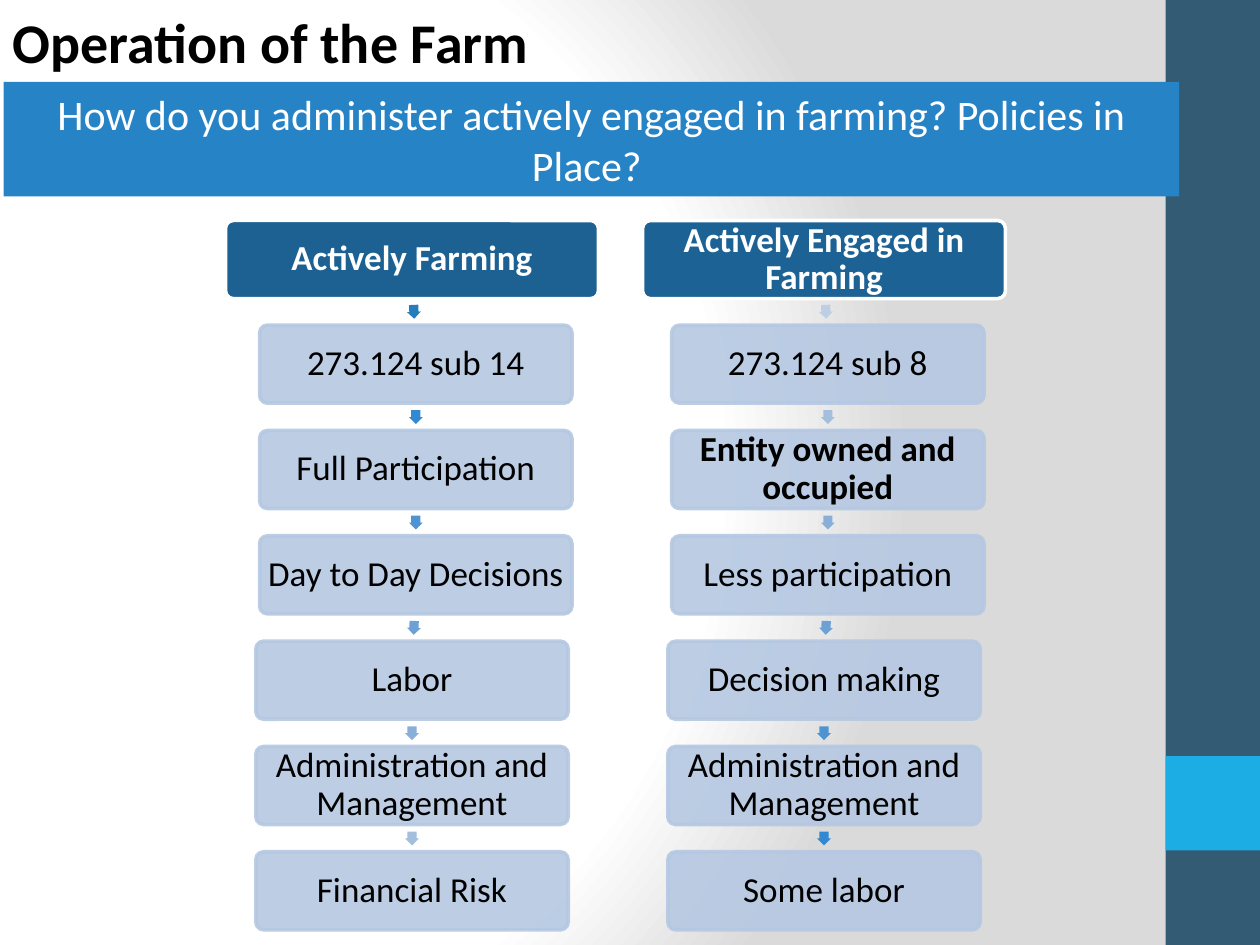
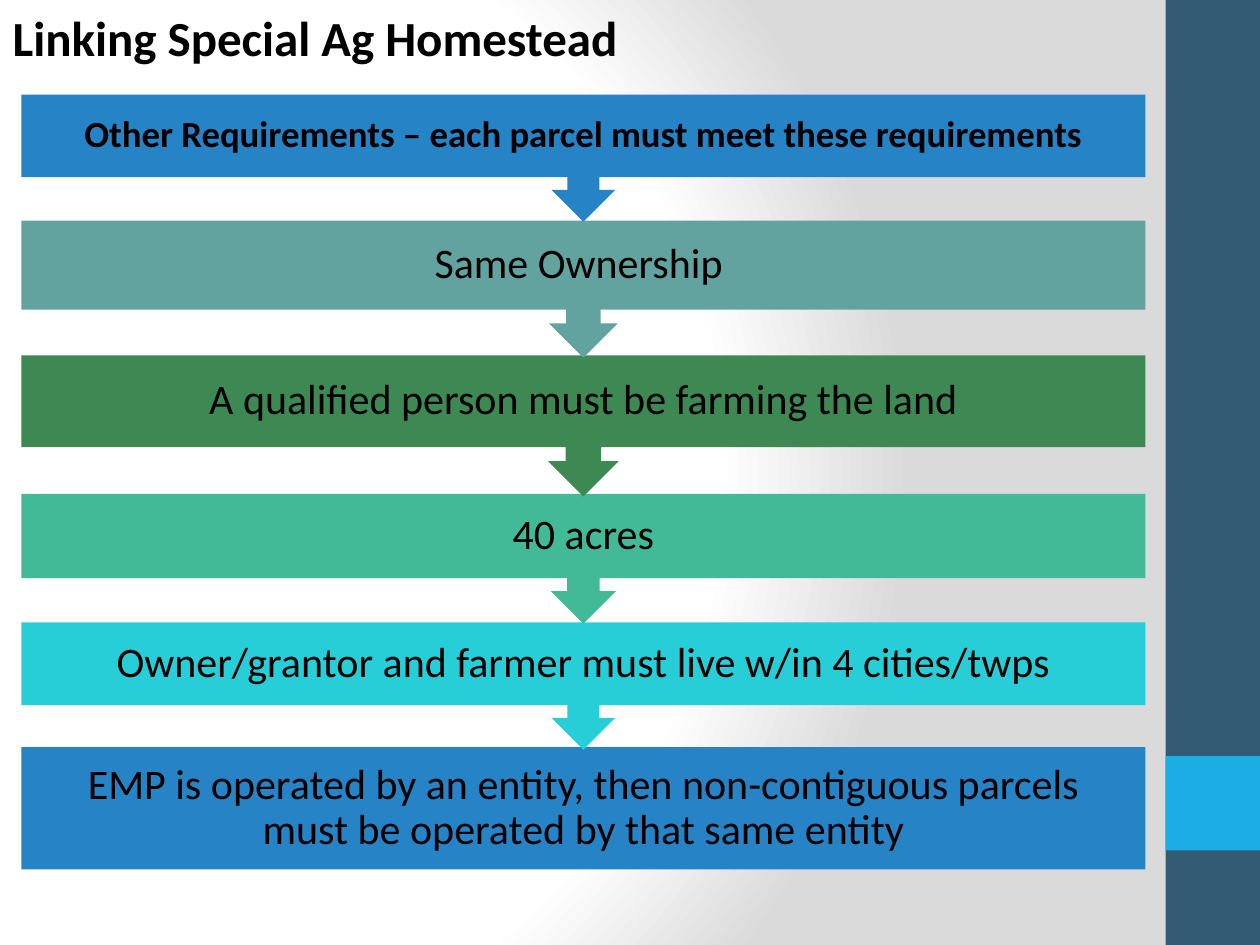
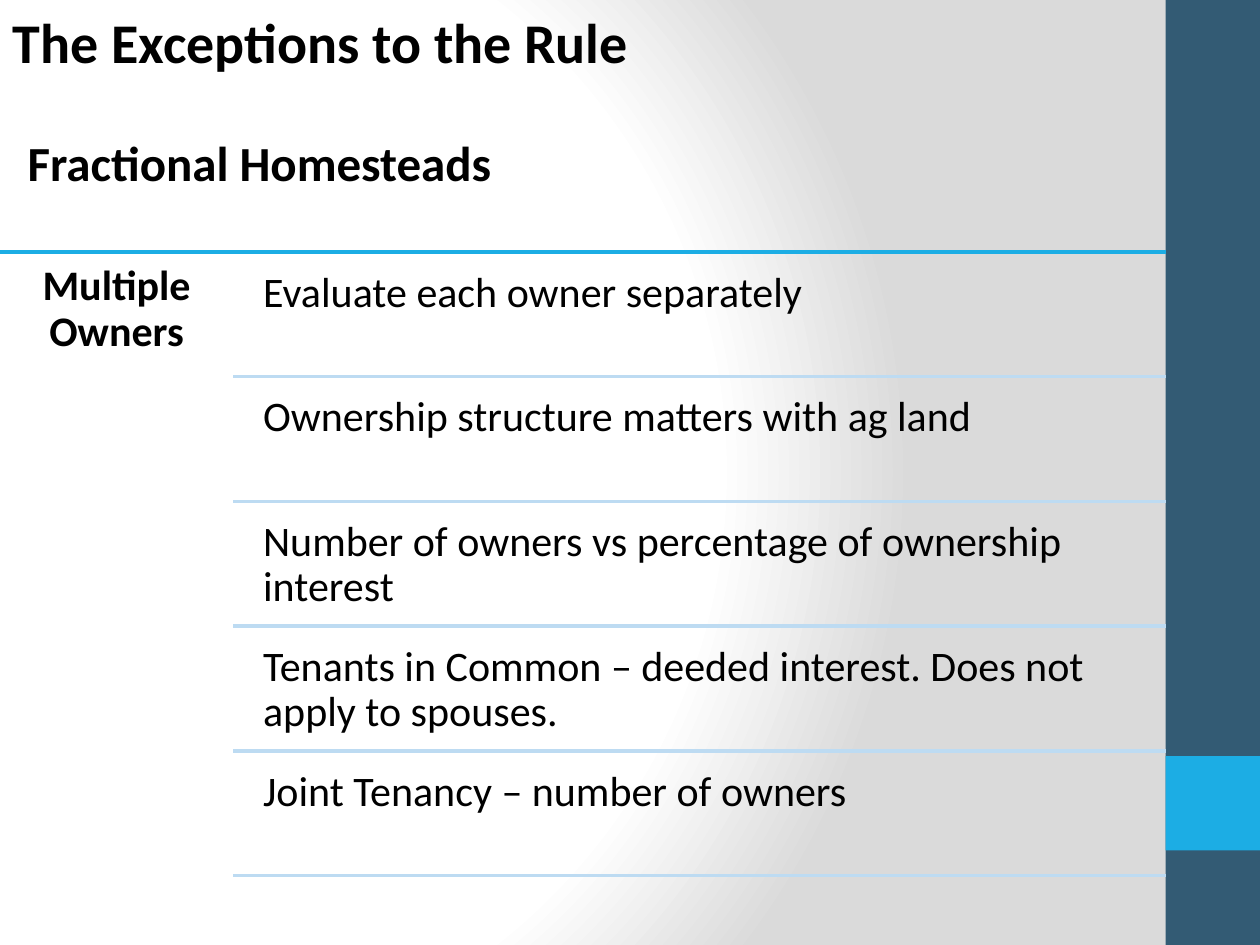
from lxml import etree
from pptx import Presentation
from pptx.dml.color import RGBColor
from pptx.enum.shapes import MSO_CONNECTOR, MSO_SHAPE
from pptx.enum.text import MSO_ANCHOR, MSO_AUTO_SIZE, PP_ALIGN
from pptx.oxml import parse_xml
from pptx.oxml.ns import nsdecls, qn
from pptx.util import Inches, Pt

RECTANGLE = MSO_SHAPE.RECTANGLE
ROUNDED = MSO_SHAPE.ROUNDED_RECTANGLE
RIGHT_ARROW = MSO_SHAPE.RIGHT_ARROW
DOWN_CALLOUT = MSO_SHAPE.DOWN_ARROW_CALLOUT
STRAIGHT = MSO_CONNECTOR.STRAIGHT
LEFT, CENTER = PP_ALIGN.LEFT, PP_ALIGN.CENTER
TOP, MIDDLE = MSO_ANCHOR.TOP, MSO_ANCHOR.MIDDLE
NO_AUTOFIT = MSO_AUTO_SIZE.NONE

FONT = "Calibri"
BLACK, WHITE = "000000", "FFFFFF"
NAVY, SKY, BLUE, PALE_BLUE = "335B74", "1CADE4", "2683C6", "B5C8E2"
ROW_LINE = "BDDBF2"


def add_panel(slide, kind, left, top, width, height, fill, line=None):
    shape = slide.shapes.add_shape(
        kind, Inches(left), Inches(top), Inches(width), Inches(height))
    shape.shadow.inherit = False
    shape.fill.solid()
    shape.fill.fore_color.rgb = RGBColor.from_string(fill)
    if line:
        shape.line.color.rgb = RGBColor.from_string(line)
        shape.line.width = Pt(2)
    else:
        shape.line.fill.background()
    return shape


def write_text(shape, text, size, color=BLACK, bold=False, align=CENTER,
               anchor=MIDDLE, inset=None, spacing=0.9):
    """Fill a shape with one formatted paragraph; inset None keeps the default margins."""
    frame = shape.text_frame
    frame.text = text
    frame.word_wrap = True
    frame.auto_size = NO_AUTOFIT
    frame.vertical_anchor = anchor
    if inset is not None:
        frame.margin_left = frame.margin_right = Inches(inset)
        frame.margin_top = frame.margin_bottom = Inches(inset)
    paragraph = frame.paragraphs[0]
    paragraph.alignment = align
    paragraph.line_spacing = spacing
    font = paragraph.runs[0].font
    font.name = FONT
    font.size = Pt(size)
    font.bold = bold
    font.color.rgb = RGBColor.from_string(color)


presentation = Presentation()
presentation.slide_width = Inches(10)
presentation.slide_height = Inches(7.5)
content_layout = presentation.slide_layouts[1]
title_layout = presentation.slide_layouts[5]

# Slides and titles
slides = []
for layout, title, size, width in [
    (title_layout, "Operation of the Farm", 32, 6.43),
    (title_layout, "Linking Special Ag Homestead", 28, 7.66),
    (content_layout, "The Exceptions to the Rule", 32, 7.66),
]:
    slide = presentation.slides.add_slide(layout)
    heading = slide.shapes.title
    heading.left, heading.top = Inches(0), Inches(0.01)
    heading.width, heading.height = Inches(width), Inches(0.64)
    write_text(heading, title, size, bold=True, align=LEFT, anchor=TOP, spacing=1)
    slides.append(slide)
farm_slide, linking_slide, exceptions_slide = slides

# Master: gradient background and side bands
master = presentation.slide_master
master.background.fill.solid()
background = master.element.find(".//" + qn("p:bgPr"))
stops = "".join(
    f'<a:gs pos="{position}"><a:srgbClr val="{color}"/></a:gs>'
    for position, color in [(0, WHITE), (75000, WHITE), (100000, "DADADA")])
background.replace(background[0], parse_xml(
    f'<a:gradFill {nsdecls("a")} rotWithShape="1"><a:gsLst>{stops}</a:gsLst>'
    '<a:path path="circle">'
    '<a:fillToRect l="20000" t="50000" r="100000" b="50000"/>'
    '</a:path></a:gradFill>'))
for index, (top, height, color) in enumerate([(0, 7.5, NAVY), (6, 0.75, SKY)]):
    band = add_panel(farm_slide, RECTANGLE, 9.25, top, 0.75, height, color).element
    band.nvSpPr.cNvPr.set("id", str(20 + index))
    master.shapes.element.insert(2 + index, band)

# Slide 1: two parallel flows
ARROW_RAMP = ["247DBD", "3189D1", "4F94D2", "6DA1D5", "89AFD9", "A4BEDE", "BECEE5"]
STEP_SHIFTS = [0.03, 0.03, 0.03, 0, 0, 0]
STEP_PITCH = 0.836
STEP_WIDTH, STEP_HEIGHT = 2.48, 0.62
ARROW_SIZE = 0.11
flows = [
    ("Actively Farming", 3.27, 2.96, "1C6192", ARROW_RAMP[:6],
     ["273.124 sub 14", "Full Participation", "Day to Day Decisions", "Labor",
      "Administration and Management", "Financial Risk"]),
    ("Actively Engaged in Farming", 6.54, 2.88, "1D6294", ARROW_RAMP[:0:-1],
     ["273.124 sub 8", "Entity owned and occupied", "Less participation",
      "Decision making", "Administration and Management", "Some labor"]),
]
for header, center, header_width, header_color, arrow_colors, steps in flows:
    header_box = add_panel(farm_slide, ROUNDED, center - header_width / 2, 1.75,
                           header_width, STEP_HEIGHT, header_color, WHITE)
    header_box.adjustments[0] = 0.1
    write_text(header_box, header, 20, WHITE, bold=True, inset=0.05)
    previous_shift = 0
    for row, (step, shift, color) in enumerate(zip(steps, STEP_SHIFTS, arrow_colors)):
        arrow_center = center + (previous_shift + shift) / 2
        arrow = add_panel(farm_slide, RIGHT_ARROW, arrow_center - ARROW_SIZE / 2,
                          2.42 + row * STEP_PITCH, ARROW_SIZE, ARROW_SIZE, color)
        arrow.adjustments[0] = 0.67
        arrow.rotation = 90 - (shift - previous_shift) * 77
        box = add_panel(farm_slide, ROUNDED, center + shift - STEP_WIDTH / 2,
                        2.58 + row * STEP_PITCH, STEP_WIDTH, STEP_HEIGHT,
                        PALE_BLUE, PALE_BLUE)
        box.adjustments[0] = 0.1
        for color_element in box.element.spPr.iter(qn("a:srgbClr")):
            etree.SubElement(color_element, qn("a:alpha")).set("val", "90000")
        write_text(box, step, 20, bold=step.startswith("Entity"), inset=0.05)
        previous_shift = shift

banner = add_panel(farm_slide, RECTANGLE, 0.03, 0.65, 9.33, 0.91, BLUE)
write_text(banner, "How do you administer actively engaged in farming? Policies in Place? ",
           24, WHITE, spacing=1)

# Slide 2: chain of requirements, drawn from the bottom up
requirements = [
    ("Other Requirements – each parcel must meet these requirements", 0.75, 1.01, BLUE),
    ("Same Ownership ", 1.75, 1.09, "62A39F"),
    ("A qualified person must be farming the land", 2.82, 1.12, "3E8853"),
    ("40 acres", 3.92, 1.03, "42BA97"),
    ("Owner/grantor and farmer must live w/in 4 cities/twps", 4.94, 1.01, "27CED7"),
    ("EMP is operated by an entity, then non-contiguous parcels must be operated "
     "by that same entity", 5.93, 0.97, BLUE),
]
for requirement, top, height, color in reversed(requirements):
    is_first = requirement == requirements[0][0]
    is_last = requirement == requirements[-1][0]
    panel = add_panel(linking_slide, RECTANGLE if is_last else DOWN_CALLOUT,
                      0.17, top, 8.92, height, color)
    write_text(panel, requirement, 21 if is_first else 24, bold=is_first,
               inset=0.16 if is_first else 0.19)

# Slide 3: ruled list
body = exceptions_slide.placeholders[1]
body.left, body.top = Inches(0), Inches(1)
body.width, body.height = Inches(9.08), Inches(6.08)
write_text(body, "Fractional Homesteads", 28, bold=True, align=LEFT, anchor=TOP, spacing=1)
body_paragraph = body.text_frame.paragraphs[0]
body_paragraph.space_before = Pt(0)
body_properties = body_paragraph._p.get_or_add_pPr()
body_properties.set("marL", str(Inches(0.12)))
body_properties.set("indent", "0")
etree.SubElement(body_properties, qn("a:buNone"))

ROW_PITCH = 0.99
points = [
    "Evaluate each owner separately",
    "Ownership structure matters with ag land",
    "Number of owners vs percentage of ownership interest",
    "Tenants in Common – deeded interest. Does not apply to spouses.",
    "Joint Tenancy – number of owners",
]
texts = [("Multiple Owners", 0, 2, 1.85, 5, True, CENTER)]
rules = [(0, 2, SKY)]
for row, point in enumerate(points):
    texts.append((point, 1.99, 2.05 + row * ROW_PITCH, 7.26, 0.94, False, LEFT))
    rules.append((1.85, 2 + (row + 1) * ROW_PITCH, ROW_LINE))

for text, left, top, width, height, bold, align in texts:
    text_box = exceptions_slide.shapes.add_textbox(
        Inches(left), Inches(top), Inches(width), Inches(height))
    write_text(text_box, text, 24, bold=bold, align=align, anchor=TOP, inset=0.1)
for left, top, color in rules:
    rule = exceptions_slide.shapes.add_connector(
        STRAIGHT, Inches(left), Inches(top), Inches(9.25), Inches(top))
    rule.line.color.rgb = RGBColor.from_string(color)
    rule.line.width = Pt(2)
    etree.SubElement(rule.element.spPr, qn("a:effectLst"))

presentation.save("out.pptx")
